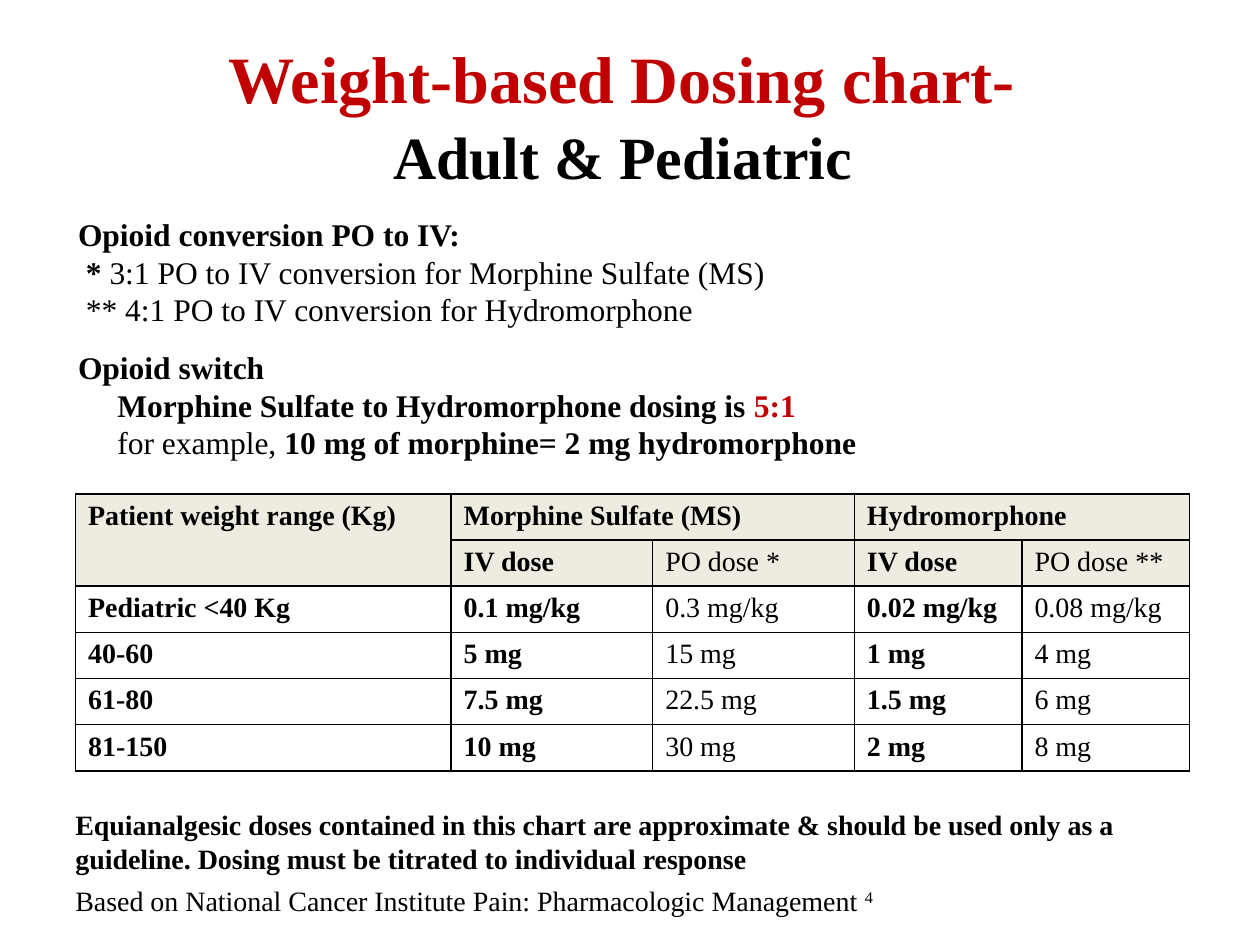
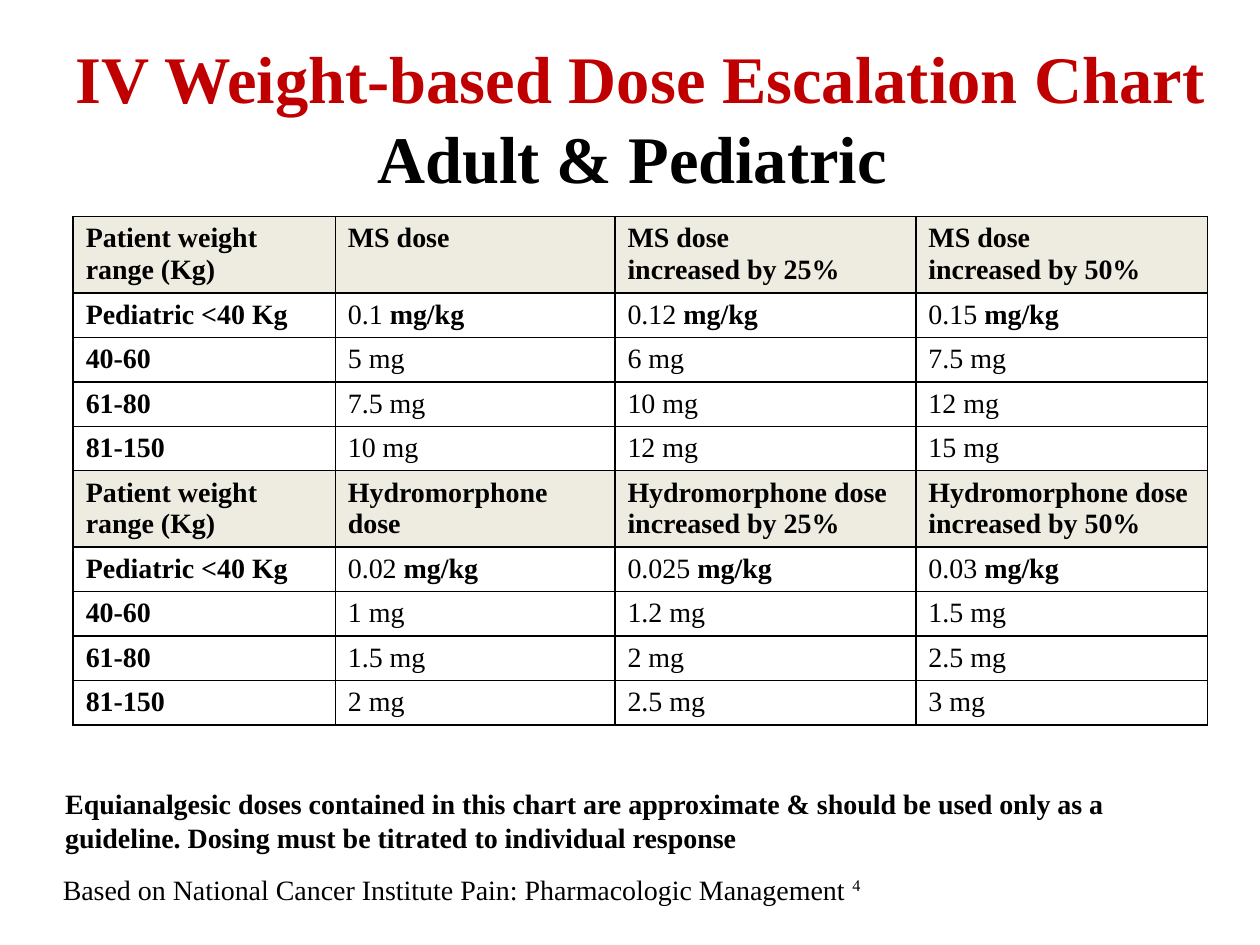
from lxml.etree import SubElement
from pptx import Presentation
from pptx.dml.color import RGBColor
from pptx.enum.text import MSO_ANCHOR as ANCHOR, MSO_AUTO_SIZE as AUTO, PP_ALIGN as ALIGN
from pptx.oxml.ns import qn
from pptx.util import Pt

RED, BLACK, WHITE, SAND = "C00000", "000000", "FFFFFF", "EEECE1"
FONT = "Times New Roman"
FRAME = {"word_wrap": True, "auto_size": AUTO.NONE}


def color(target, value):
    if hasattr(target, "solid"):
        target.solid()
        target = target.fore_color
    else:
        target = target.color
    target.rgb = RGBColor.from_string(value)


def write(p, runs, size, line=None):
    fmt = {"space_before": Pt(0), "space_after": Pt(0)}
    if line:
        fmt["line_spacing"] = Pt(line)
    for key, value in fmt.items():
        setattr(p, key, value)
    for text, bold, *tint in runs:
        r = p.add_run()
        r.text = text
        for key, value in {"name": FONT, "size": Pt(size), "bold": bold}.items():
            setattr(r.font, key, value)
        color(r.font, tint[0] if tint else BLACK)
    return p


prs = Presentation()
prs.slide_width, prs.slide_height = Pt(720), Pt(540)

opioid_lines = [
    (0, 0, [("Opioid conversion PO to IV:", True)]),
    (4.5, 0, [("* ", True), ("3:1 PO to IV conversion for Morphine Sulfate (MS)", False)]),
    (4.5, 0, [("** 4:1 PO to IV conversion for Hydromorphone", False)]),
    (0, 12, [("Opioid switch", True)]),
    (22.5, 0, [("Morphine Sulfate to Hydromorphone dosing is ", True), ("5:1", True, RED)]),
    (22.5, 0, [("for example, ", False), ("10 mg of morphine= 2 mg hydromorphone", True)]),
]
dosing_rows = [
    ["Patient weight range (Kg)", "Morphine Sulfate (MS)", "", "Hydromorphone", ""],
    ["", "IV dose", "PO dose *", "IV dose", "PO dose **"],
    ["Pediatric <40 Kg", "0.1 mg/kg", "0.3 mg/kg", "0.02 mg/kg", "0.08 mg/kg"],
    ["40-60", "5 mg", "15 mg", "1 mg", "4 mg"],
    ["61-80", "7.5 mg", "22.5 mg", "1.5 mg", "6 mg"],
    ["81-150", "10 mg", "30 mg", "2 mg", "8 mg"],
]
escalation_rows = [
    ["Patient weight range (Kg)", "MS dose", "MS dose\nincreased by 25%", "MS dose\nincreased by 50%"],
    ["Pediatric <40 Kg", "0.1 mg/kg", "0.12 mg/kg", "0.15 mg/kg"],
    ["40-60", "5 mg", "6 mg", "7.5 mg"],
    ["61-80", "7.5 mg", "10 mg", "12 mg"],
    ["81-150", "10 mg", "12 mg", "15 mg"],
    ["Patient weight range (Kg)", "Hydromorphone dose", "Hydromorphone dose increased by 25%",
     "Hydromorphone dose increased by 50%"],
    ["Pediatric <40 Kg", "0.02 mg/kg", "0.025 mg/kg", "0.03 mg/kg"],
    ["40-60", "1 mg", "1.2 mg", "1.5 mg"],
    ["61-80", "1.5 mg", "2 mg", "2.5 mg"],
    ["81-150", "2 mg", "2.5 mg", "3 mg"],
]
caution = ("Equianalgesic doses contained in this chart are approximate & should be used only as a "
           "guideline. Dosing must be titrated to individual response")
credit = "Based on National Cancer Institute Pain: Pharmacologic Management "

pages = [
    {"layout": 1, "title": [("Weight-based Dosing chart- ", 37.8), ("Adult & Pediatric ", 34.2)],
     "title_box": (36, 21.6, 648, 90), "title_line": 42.6, "body": opioid_lines,
     "rows": dosing_rows, "at": (43.2, 282.2), "cols": [214.6, 115.2, 115.2, 95.8, 95.8],
     "heads": (0, 1), "head_height": 26.4, "row_height": 26.4, "bold_cols": (0, 1, 3),
     "merges": [(0, 0, 1, 0), (0, 1, 0, 2), (0, 3, 0, 4)], "right_edge": 1,
     "caution_box": (36, 457.9, 648, 46), "credit_box": (36, 501.1, 642, 26.6)},
    {"layout": 5, "title": [("IV Weight-based Dose Escalation Chart", 38), ("Adult & Pediatric ", 38)],
     "title_box": (30.2, 21.6, 671.8, 90), "title_line": 45.7, "body": [],
     "rows": escalation_rows, "at": (41.8, 123.8), "cols": [149.8, 159.8, 172, 166.3],
     "heads": (0, 5), "head_height": 43.6, "row_height": 25.4, "bold_cols": (0,),
     "merges": [], "right_edge": 0.25,
     "caution_box": (30.2, 445.7, 660.2, 46), "credit_box": (28.8, 494.6, 642, 26.6)},
]

for page in pages:
    s = prs.slides.add_slide(prs.slide_layouts[page["layout"]])

    sp = s.shapes.title
    sp.left, sp.top, sp.width, sp.height = [Pt(v) for v in page["title_box"]]
    tf = sp.text_frame
    for key, value in {**FRAME, "vertical_anchor": ANCHOR.MIDDLE}.items():
        setattr(tf, key, value)
    p = tf.paragraphs[0]
    p.alignment = ALIGN.CENTER
    for i, ((text, size), tint) in enumerate(zip(page["title"], (RED, BLACK))):
        if i:
            p.add_line_break()
        write(p, [(text, True, tint)], size, page["title_line"])

    if page["body"]:
        sp = s.placeholders[1]
        sp.left, sp.top, sp.width, sp.height = Pt(37.4), Pt(119.5), Pt(631.4), Pt(150.5)
        tf = sp.text_frame
        for key, value in FRAME.items():
            setattr(tf, key, value)
        for i, (indent, gap, runs) in enumerate(page["body"]):
            p = tf.add_paragraph() if i else tf.paragraphs[0]
            write(p, runs, 18, 21.4).space_before = Pt(gap)
            pPr = p._p.get_or_add_pPr()
            pPr.set("marL", str(Pt(indent)))
            pPr.set("indent", "0")
            SubElement(pPr, qn("a:buNone"))

    rows, cols = page["rows"], page["cols"]
    heights = [page["head_height"] if i in page["heads"] else page["row_height"] for i in range(len(rows))]
    left, top = page["at"]
    tbl = s.shapes.add_table(len(rows), len(cols), Pt(left), Pt(top), Pt(sum(cols)), Pt(sum(heights))).table
    tbl.first_row = tbl.horz_banding = False
    for col, width in zip(tbl.columns, cols):
        col.width = Pt(width)
    for i, texts in enumerate(rows):
        tbl.rows[i].height = Pt(heights[i])
        head = i in page["heads"]
        for j, text in enumerate(texts):
            cell = tbl.cell(i, j)
            bold = j in page["bold_cols"] or (head and page["layout"] == 5)
            for n, part in enumerate(text.split("\n") if text else []):
                p = cell.text_frame.add_paragraph() if n else cell.text_frame.paragraphs[0]
                if page["layout"] == 5 and j and part.endswith("mg/kg"):
                    write(p, [(part[:-5], False), ("mg/kg", True)], 16)
                else:
                    write(p, [(part, bold)], 16)
            tcPr = cell._tc.get_or_add_tcPr()
            for side in "LRTB":
                weight = page["right_edge"] if side == "R" and j == len(cols) - 1 else 1
                ln = SubElement(tcPr, qn("a:ln" + side), w=str(Pt(weight)))
                SubElement(SubElement(ln, qn("a:solidFill")), qn("a:srgbClr"), val=BLACK)
            color(cell.fill, SAND if head else WHITE)
    for r1, c1, r2, c2 in page["merges"]:
        tbl.cell(r1, c1).merge(tbl.cell(r2, c2))

    for name, runs in (("caution_box", [(caution, True)]), ("credit_box", [(credit, False), ("4", False)])):
        tf = s.shapes.add_textbox(*[Pt(v) for v in page[name]]).text_frame
        for key, value in FRAME.items():
            setattr(tf, key, value)
        p = write(tf.paragraphs[0], runs, 16, 19.4)
    p.runs[-1]._r.get_or_add_rPr().set("baseline", "30000")

prs.save("out.pptx")
